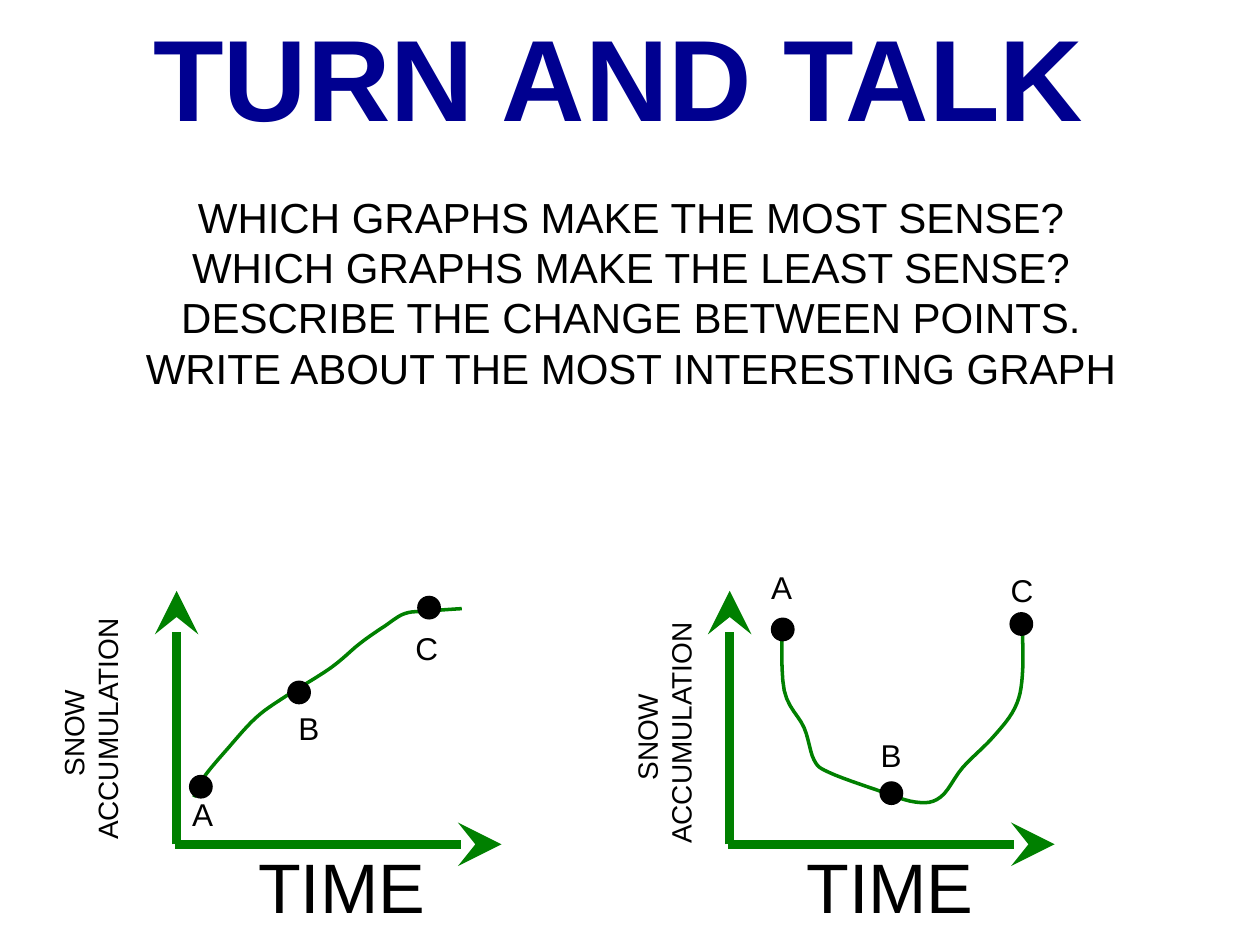
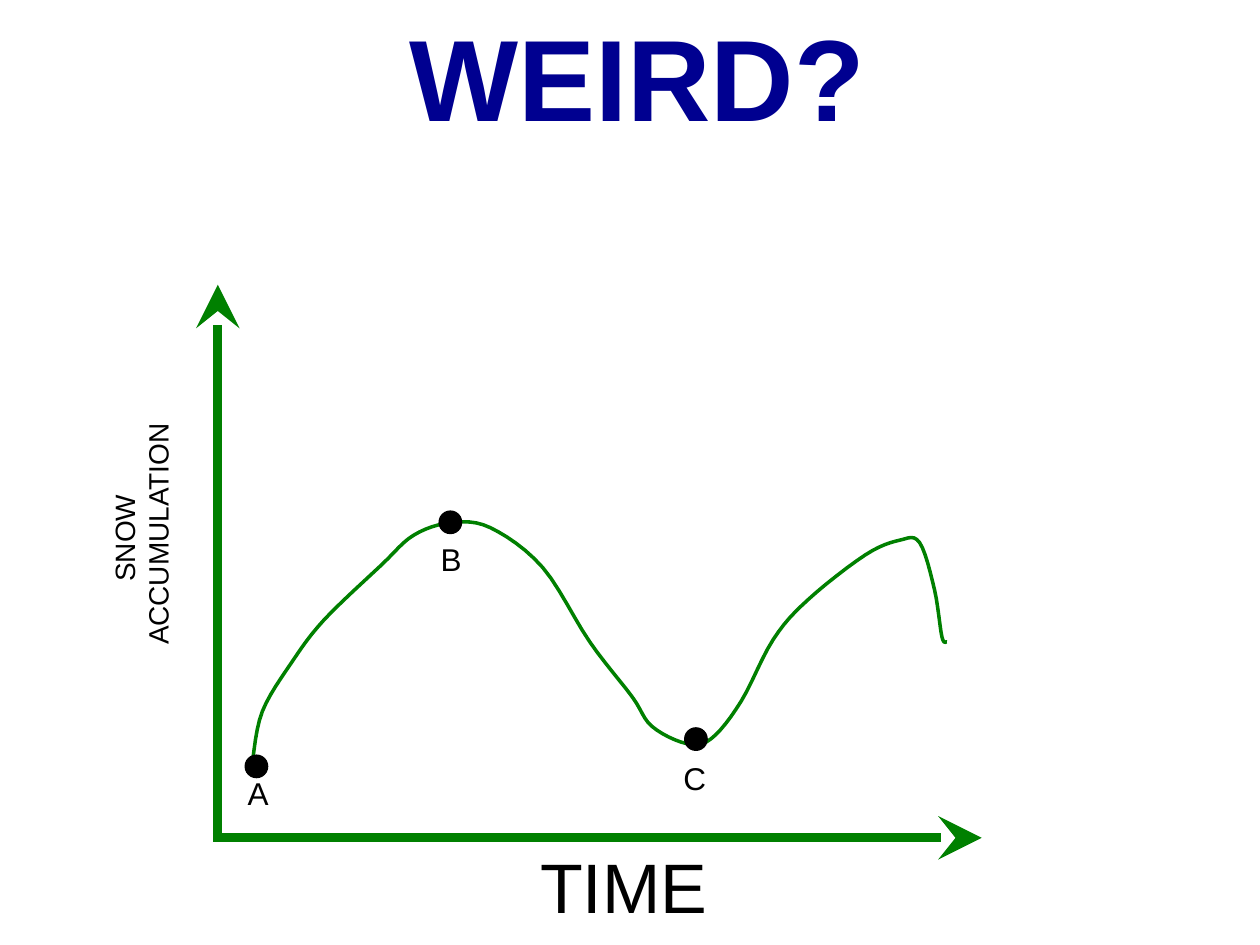
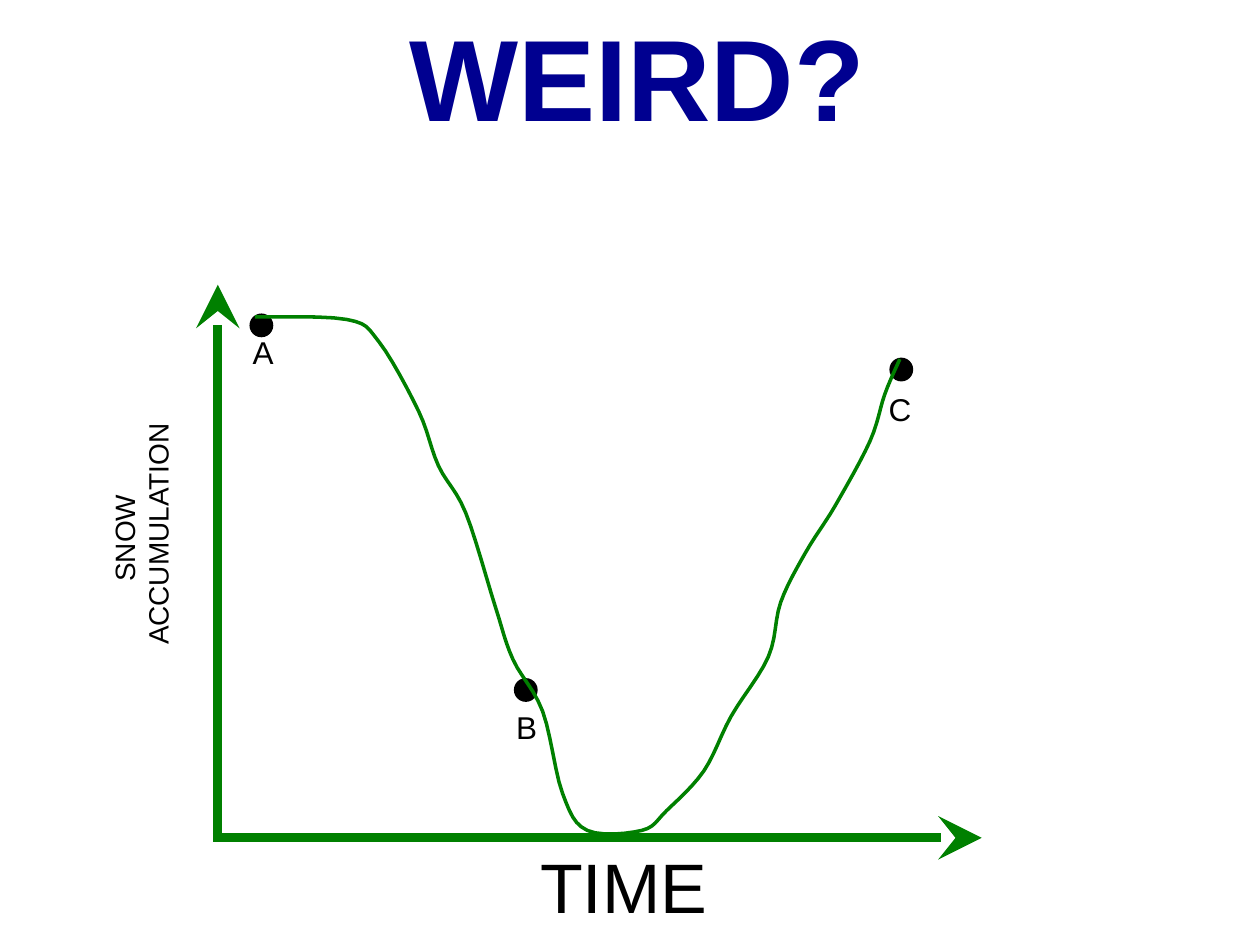
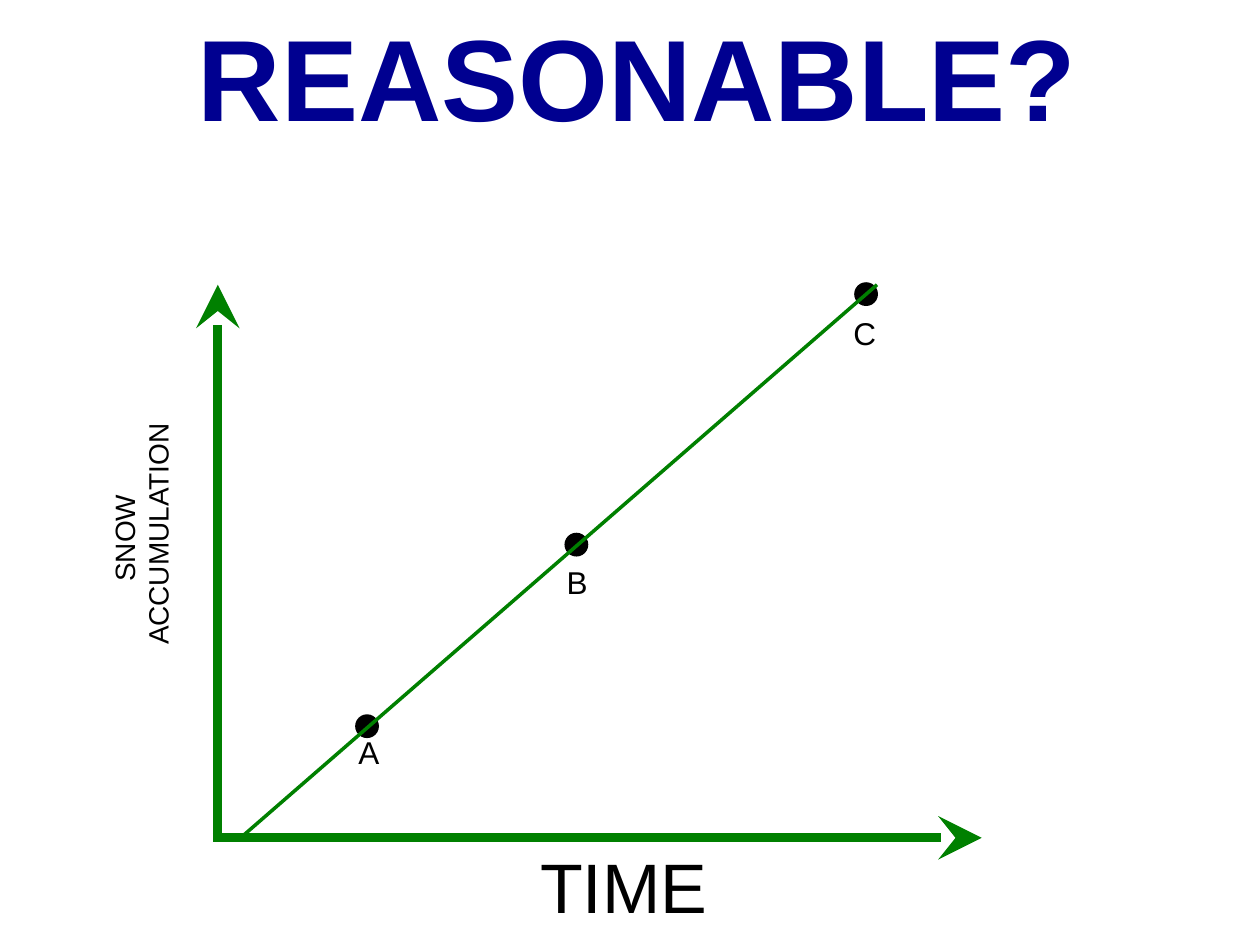
from dataclasses import dataclass, replace
from typing import NamedTuple

from lxml import etree
from pptx import Presentation
from pptx import util as u
from pptx.dml.color import RGBColor
from pptx.enum import shapes, text
from pptx.oxml.ns import qn
from pptx.shapes.connector import Connector
from pptx.slide import Slide

CENTER = text.PP_ALIGN.CENTER
LEFT = text.PP_ALIGN.LEFT


# Theme
@dataclass(frozen=True)
class Theme:
    font: str = "Arial"
    title_color: RGBColor = RGBColor(0x00, 0x00, 0x90)
    ink: RGBColor = RGBColor(0x00, 0x00, 0x00)
    green: RGBColor = RGBColor(0x00, 0x80, 0x00)
    title_size: int = 66
    time_size: int = 40
    question_size: int = 24
    mark_size: int = 18
    snow_size: int = 16
    axis_width: int = 5
    curve_width: int = 2


THEME = Theme()


# Geometry, in centimetres
class Point(NamedTuple):
    x: float
    y: float


class Size(NamedTuple):
    width: float
    height: float


class Box(NamedTuple):
    left: float
    top: float
    width: float
    height: float


SLIDE_SIZE = Size(25.4, 19.05)
DOT_SIZE = Size(0.48, 0.48)
MARK_SIZE = Size(0.97, 1.02)
TIME_SIZE = Size(3.91, 1.96)
SNOW_SIZE = Size(5.03, 1.63)
TITLE_BOX = Box(2.84, 0, 20.02, 3.07)
WIDE_TITLE_BOX = TITLE_BOX._replace(width=21.36)
QUESTION_BOX = Box(2.59, 3.73, 20.27, 4.37)
STEPS_PER_SPAN = 6  # straight pieces between two knots of a curve


def box_around(center: Point, size: Size) -> Box:
    return Box(center.x - size.width / 2, center.y - size.height / 2, *size)


# Graphs: every point inside one is measured right of and up from its origin
@dataclass(frozen=True)
class Axes:
    origin: Point
    size: Size
    overhang: float  # how far the time axis starts left of the origin
    time_center: Point
    snow_center: Point

    def place(self, point: Point) -> Point:
        """Turn a point of the graph into a point of the slide."""
        return Point(self.origin.x + point[0], self.origin.y - point[1])


@dataclass(frozen=True)
class Mark:
    name: str
    dot: Point
    label_shift: Point  # from the dot's centre to the label's


@dataclass(frozen=True)
class Graph:
    axes: Axes
    knots: list[Point]
    marks: list[Mark]
    curve_on_top: bool = False


@dataclass(frozen=True)
class GraphSlide:
    title: str
    graphs: list[Graph]
    title_box: Box = TITLE_BOX
    title_align: text.PP_ALIGN = CENTER
    questions: tuple[str, ...] = ()


def points(*pairs: tuple[float, float]) -> list[Point]:
    return [Point(*pair) for pair in pairs]


def make_marks(dots: list[Point], shifts: list[Point]) -> list[Mark]:
    return [Mark(*parts) for parts in zip("ABC", dots, shifts)]


LEFT_AXES = Axes(Point(3.56, 17.02), Size(6.55, 5.11), 0.03,
                 time_center=Point(3.33, -0.85), snow_center=Point(-1.73, 2.32))
RIGHT_AXES = replace(LEFT_AXES, origin=Point(14.71, 17.02),
                     time_center=Point(3.23, -0.83), snow_center=Point(-1.32, 2.24))
LARGE_AXES = Axes(Point(4.39, 16.89), Size(15.4, 11.15), 0.1,
                  time_center=Point(8.18, -0.98), snow_center=Point(-1.54, 6.12))

LABELS_BELOW = points((0.06, -0.53), (0.04, -0.75), (-0.02, -0.79))
LABELS_BESIDE_RISE = points((0.06, -0.55), (0.22, -0.72), (-0.04, -0.81))
LABELS_ABOVE = points((0, 0.85), (0.02, 0.77), (0.02, 0.69))

# Rises quickly, then levels off
RISING = Graph(
    LEFT_AXES,
    points((0.35, 0.95), (0.55, 1.35), (1.05, 1.95), (1.6, 2.55), (2.15, 2.95),
           (3.1, 3.55), (3.7, 4.05), (4.2, 4.4), (4.6, 4.65), (5.05, 4.7), (5.75, 4.75)),
    make_marks(points((0.49, 1.16), (2.47, 3.06), (5.09, 4.77)), LABELS_BESIDE_RISE),
)
# Drops to a low floor, then climbs back
BOWL = Graph(
    RIGHT_AXES,
    points((1.05, 4.45), (1.1, 3.1), (1.5, 2.35), (1.7, 1.7), (2, 1.45), (2.95, 1.1),
           (3.75, 0.85), (4.25, 0.95), (4.7, 1.55), (5.3, 2.15), (5.75, 2.75),
           (5.9, 3.4), (5.9, 4.45)),
    make_marks(points((1.07, 4.33), (3.26, 1.03), (5.88, 4.44)), LABELS_ABOVE),
)
# Two crests with a trough between them
WAVE = Graph(
    LARGE_AXES,
    points((0.7, 1.55), (0.9, 2.55), (1.5, 3.55), (2.15, 4.4), (3.3, 5.5), (3.95, 6.1),
           (4.7, 6.35), (5.5, 6.25), (6.55, 5.45), (7.5, 3.95), (8.35, 2.85),
           (8.75, 2.25), (9.45, 1.9), (9.95, 2), (10.55, 2.75), (11.2, 4), (11.9, 4.8),
           (13.05, 5.7), (13.75, 6), (14.15, 5.95), (14.45, 5), (14.6, 4.05),
           (14.7, 3.95)),
    make_marks(points((0.78, 1.44), (4.69, 6.36), (9.64, 1.99)), LABELS_BELOW),
)
# Falls to nothing, then returns
VALLEY = Graph(
    LARGE_AXES,
    points((0.75, 10.5), (2.6, 10.45), (3.25, 10), (4.05, 8.6), (4.45, 7.5), (5, 6.55),
           (5.6, 4.65), (5.95, 3.6), (6.55, 2.55), (6.95, 0.9), (7.45, 0.15),
           (8.55, 0.15), (9.05, 0.55), (9.8, 1.35), (10.35, 2.45), (11.1, 3.65),
           (11.35, 4.75), (11.85, 5.75), (12.45, 6.7), (13.15, 8), (13.45, 8.95),
           (13.75, 9.65)),
    make_marks(points((0.88, 10.33), (6.21, 2.98), (13.78, 9.44)), LABELS_BELOW),
    curve_on_top=True,
)
# Grows at a constant rate
STEADY = Graph(
    LARGE_AXES,
    points((0.46, 0), (13.29, 11.15)),
    make_marks(points((3.01, 2.25), (7.23, 5.91), (13.07, 10.96)), LABELS_BELOW),
    curve_on_top=True,
)

SLIDES = [
    GraphSlide(
        "TURN AND TALK",
        [RISING, BOWL],
        WIDE_TITLE_BOX,
        LEFT,
        (
            "WHICH GRAPHS MAKE THE MOST SENSE?",
            "WHICH GRAPHS MAKE THE LEAST SENSE?",
            "DESCRIBE THE CHANGE BETWEEN POINTS.",
            "WRITE ABOUT THE MOST INTERESTING GRAPH",
        ),
    ),
    GraphSlide("WEIRD?", [WAVE]),
    GraphSlide("WEIRD?", [VALLEY]),
    GraphSlide("REASONABLE?", [STEADY]),
]


# Curve rule
def spline(before: float, start: float, end: float, after: float, t: float) -> float:
    """Catmull-Rom value at t, from 0 at start to 1 at end."""
    return start + t / 2 * (
        end - before
        + t * (2 * before - 5 * start + 4 * end - after)
        + t * t * (3 * (start - end) + after - before)
    )


def smooth(knots: list[Point]) -> list[Point]:
    """Fill in points so that a smooth curve passes through every knot."""
    padded = [knots[0], *knots, knots[-1]]
    curve = [
        Point(*(spline(*values, step / STEPS_PER_SPAN) for values in zip(*span)))
        for span in zip(padded, padded[1:], padded[2:], padded[3:])
        for step in range(STEPS_PER_SPAN)
    ]
    return [*curve, knots[-1]]


# Drawing
def add_text(slide: Slide, box: Box, lines: tuple[str, ...], size: int,
             color: RGBColor = THEME.ink, align: text.PP_ALIGN = CENTER,
             bold: bool = False, rotation: float = 0) -> None:
    shape = slide.shapes.add_textbox(*map(u.Cm, box))
    shape.rotation = rotation
    frame = shape.text_frame
    frame.word_wrap = True
    frame.text = "\n".join(lines)
    for paragraph in frame.paragraphs:
        paragraph.alignment = align
        font = paragraph.font
        font.name, font.size, font.bold = THEME.font, u.Pt(size), bold
        font.color.rgb = color


def add_line(parent, start: Point, end: Point, width: int) -> Connector:
    """Draw a straight green line among the shapes of a slide or group."""
    connector = parent.add_connector(
        shapes.MSO_CONNECTOR.STRAIGHT, *map(u.Cm, (*start, *end)))
    connector.line.color.rgb = THEME.green
    connector.line.width = u.Pt(width)
    etree.SubElement(connector._element.spPr, qn("a:effectLst"))
    return connector


def add_axes(slide: Slide, axes: Axes) -> None:
    group = slide.shapes.add_group_shape()
    time_axis = Point(-axes.overhang, 0), Point(axes.size.width, 0)
    snow_axis = Point(0, 0), Point(0, axes.size.height)
    for start, end in (time_axis, snow_axis):
        arrow = add_line(group.shapes, axes.place(start), axes.place(end),
                         THEME.axis_width)
        etree.SubElement(arrow.line._get_or_add_ln(), qn("a:tailEnd"),
                         type="stealth", w="lg", len="lg")


def add_curve(slide: Slide, graph: Graph) -> None:
    knots = [graph.axes.place(knot) for knot in graph.knots]
    if len(knots) == 2:
        add_line(slide.shapes, *knots, THEME.curve_width)
        return
    start, *rest = [(u.Cm(x), u.Cm(y)) for x, y in smooth(knots)]
    builder = slide.shapes.build_freeform(*start)
    builder.add_line_segments(rest, close=False)
    curve = builder.convert_to_shape()
    curve.shadow.inherit = False
    curve.fill.background()
    curve.line.color.rgb = THEME.green
    curve.line.width = u.Pt(THEME.curve_width)


def add_dot(slide: Slide, center: Point) -> None:
    dot = slide.shapes.add_shape(
        shapes.MSO_SHAPE.OVAL, *map(u.Cm, box_around(center, DOT_SIZE)))
    dot.shadow.inherit = False
    dot.fill.solid()
    dot.fill.fore_color.rgb = THEME.ink
    dot.line.fill.background()


def add_mark(slide: Slide, axes: Axes, mark: Mark) -> None:
    add_dot(slide, axes.place(mark.dot))
    label = Point(mark.dot.x + mark.label_shift.x, mark.dot.y + mark.label_shift.y)
    add_text(slide, box_around(axes.place(label), MARK_SIZE), (mark.name,),
             THEME.mark_size, align=LEFT)


def add_graph(slide: Slide, graph: Graph) -> None:
    axes = graph.axes
    add_axes(slide, axes)
    if not graph.curve_on_top:
        add_curve(slide, graph)
    for mark in graph.marks:
        add_mark(slide, axes, mark)
    add_text(slide, box_around(axes.place(axes.time_center), TIME_SIZE),
             ("TIME",), THEME.time_size)
    add_text(slide, box_around(axes.place(axes.snow_center), SNOW_SIZE),
             ("SNOW ", "ACCUMULATION"), THEME.snow_size, rotation=270)
    if graph.curve_on_top:
        add_curve(slide, graph)


def main() -> None:
    presentation = Presentation()
    presentation.slide_width, presentation.slide_height = map(u.Cm, SLIDE_SIZE)
    blank = presentation.slide_layouts[6]
    for content in SLIDES:
        slide = presentation.slides.add_slide(blank)
        add_text(slide, content.title_box, (content.title,), THEME.title_size,
                 THEME.title_color, content.title_align, bold=True)
        if content.questions:
            add_text(slide, QUESTION_BOX, content.questions, THEME.question_size)
        for graph in content.graphs:
            add_graph(slide, graph)
    presentation.save("out.pptx")


if __name__ == "__main__":
    main()
